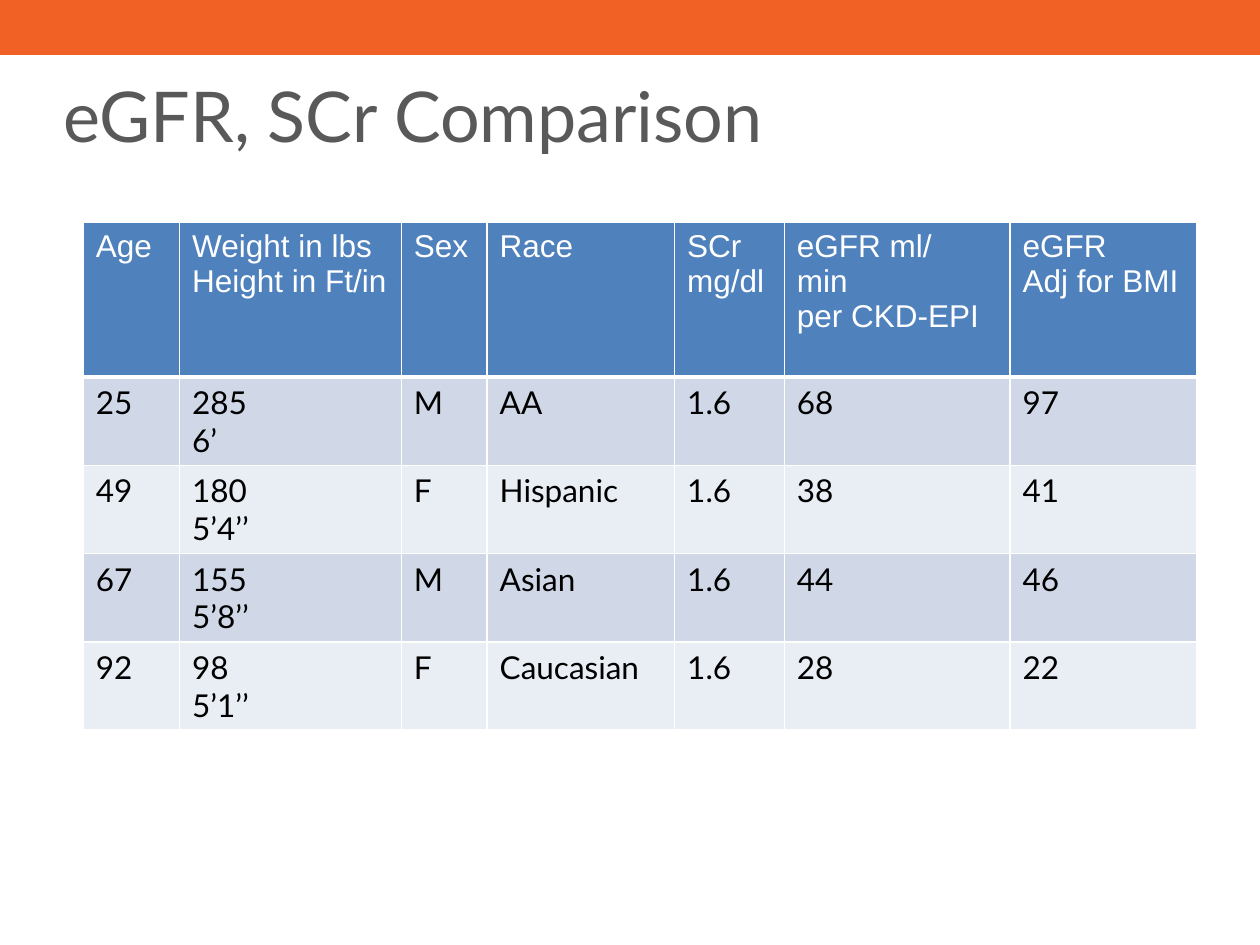
from lxml.etree import SubElement
from pptx import Presentation
from pptx.dml.color import RGBColor
from pptx.enum.shapes import MSO_SHAPE
from pptx.enum.text import MSO_ANCHOR, PP_ALIGN
from pptx.oxml import parse_xml
from pptx.oxml.ns import nsdecls, qn
from pptx.util import Cm, Pt

ORANGE = RGBColor(0xF1, 0x60, 0x25)
GREY = RGBColor(0x59, 0x59, 0x59)
BLUE = RGBColor(0x4F, 0x81, 0xBD)
BANDS = (RGBColor(0xD0, 0xD8, 0xE8), RGBColor(0xE9, 0xED, 0xF4))
WHITE = RGBColor(0xFF, 0xFF, 0xFF)
BLACK = RGBColor(0, 0, 0)

COL_WIDTHS = (1.94, 4.47, 1.73, 3.78, 2.21, 4.55, 3.76)
HEADER_HEIGHT, ROW_HEIGHT = 3.12, 1.78
ROWS = (
    ("Age", "Weight in lbs\nHeight in Ft/in", "Sex", "Race", "SCr mg/dl",
     "eGFR ml/\nmin\nper CKD-EPI", "eGFR\nAdj for BMI"),
    ("25", "285\n6’", "M", "AA", "1.6", "68", "97"),
    ("49", "180\n5’4’’", "F", "Hispanic", "1.6", "38", "41"),
    ("67", "155\n5’8’’", "M", "Asian", "1.6", "44", "46"),
    ("92", "98\n5’1’’", "F", "Caucasian", "1.6", "28", "22"),
)


def style_text(tf, font, size, color):
    for p in tf.paragraphs:
        p.alignment = PP_ALIGN.LEFT
        for r in p.runs:
            r.font.name = font
            r.font.size = Pt(size)
            r.font.bold = False
            r.font.color.rgb = color


def set_borders(cell, top, bottom):
    """Draw white cell borders; top and bottom are widths in points."""
    tc_pr = cell._tc.get_or_add_tcPr()
    widths = (("lnL", 1), ("lnR", 1), ("lnT", top), ("lnB", bottom))
    for i, (tag, width) in enumerate(widths):
        ln = parse_xml(f'<a:{tag} {nsdecls("a")} w="{Pt(width)}"/>')
        fill = SubElement(ln, qn("a:solidFill"))
        SubElement(fill, qn("a:srgbClr"), val=str(WHITE))
        tc_pr.insert(i, ln)


def add_banner(slide, width):
    sp = slide.shapes.add_shape(MSO_SHAPE.RECTANGLE, 0, 0, width, Cm(1.07))
    sp.shadow.inherit = False
    sp.fill.solid()
    sp.fill.fore_color.rgb = ORANGE
    sp.line.color.rgb = ORANGE
    sp.line.width = Pt(2)


def set_title(slide, text):
    sp = slide.shapes.title
    sp.left, sp.top, sp.width, sp.height = Cm(1.27), Cm(1.47), Cm(22.86), Cm(2.46)
    tf = sp.text_frame
    tf.text = text
    tf.vertical_anchor = MSO_ANCHOR.TOP
    tf.margin_left = tf.margin_right = tf.margin_top = tf.margin_bottom = 0
    style_text(tf, "Lato", 40, GREY)


def add_comparison_table(slide):
    height = HEADER_HEIGHT + ROW_HEIGHT * (len(ROWS) - 1)
    table = slide.shapes.add_table(
        len(ROWS), len(COL_WIDTHS), Cm(1.68), Cm(4.48),
        Cm(sum(COL_WIDTHS)), Cm(height)).table
    for col, width in zip(table.columns, COL_WIDTHS):
        col.width = Cm(width)
    for i, values in enumerate(ROWS):
        header = i == 0
        table.rows[i].height = Cm(HEADER_HEIGHT if header else ROW_HEIGHT)
        for cell, value in zip(table.rows[i].cells, values):
            cell.text_frame.text = value
            style_text(cell.text_frame, "Arial" if header else "Lato", 18,
                       WHITE if header else BLACK)
            cell.fill.solid()
            cell.fill.fore_color.rgb = BLUE if header else BANDS[(i - 1) % 2]
            set_borders(cell, top=3 if i == 1 else 1, bottom=3 if header else 1)


def main():
    prs = Presentation()
    prs.slide_width, prs.slide_height = Cm(25.4), Cm(19.05)
    slide = prs.slides.add_slide(prs.slide_layouts[5])  # title only
    add_banner(slide, prs.slide_width)
    set_title(slide, "eGFR, SCr Comparison")
    add_comparison_table(slide)
    prs.save("out.pptx")


if __name__ == "__main__":
    main()
